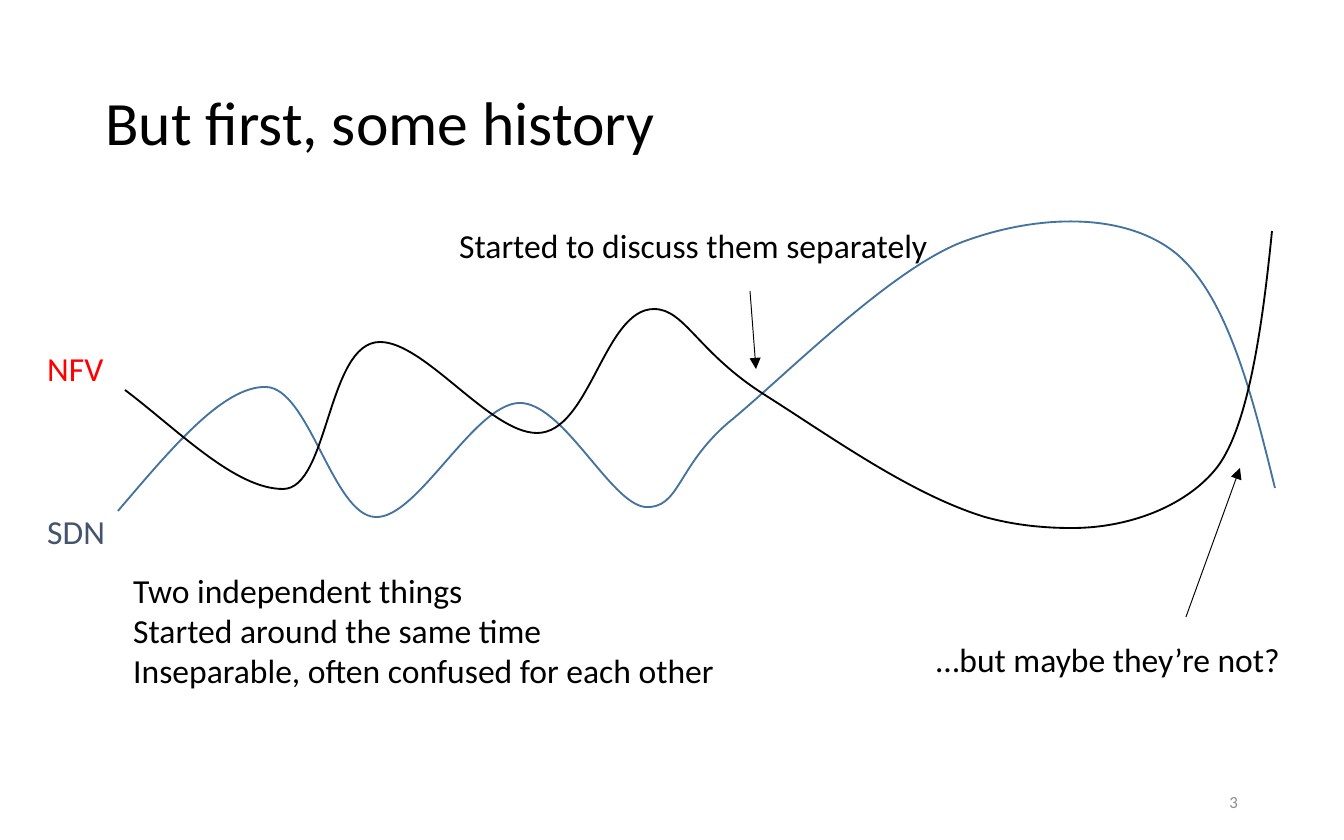
from lxml import etree
from pptx import Presentation
from pptx.dml.color import RGBColor
from pptx.enum.shapes import MSO_CONNECTOR
from pptx.enum.text import MSO_ANCHOR, PP_ALIGN
from pptx.oxml.ns import qn
from pptx.util import Emu, Pt

STRAIGHT = MSO_CONNECTOR.STRAIGHT
MIDDLE = MSO_ANCHOR.MIDDLE
LEFT, RIGHT = PP_ALIGN.LEFT, PP_ALIGN.RIGHT
TITLE_ONLY = 5
SCALE = 914400 / 134.4
FONT = "Calibri"
BLACK, RED, SLATE, BLUE, GRAY = "000000", "FF0000", "44546A", "43739E", "8C8C8C"

SDN_CURVE = [
    (0, 300),
    (53, 238), (105, 175), (148, 176),
    (191, 177), (215, 304), (257, 306),
    (299, 309), (355, 194), (401, 192),
    (445, 191), (492, 292), (527, 296),
    (562, 298), (558, 257), (610, 212),
    (663, 169), (768, 62), (842, 32),
    (915, 4), (1002, 0), (1055, 40),
    (1108, 81), (1133, 179), (1157, 277),
]
NFV_CURVE = [
    (7, 179),
    (60, 219), (117, 278), (165, 278),
    (211, 278), (209, 131), (262, 131),
    (307, 131), (372, 222), (419, 222),
    (472, 222), (486, 98), (536, 98),
    (567, 98), (579, 141), (647, 184),
    (712, 225), (792, 283), (867, 306),
    (896, 314), (925, 317), (954, 317),
    (1010, 317), (1066, 296), (1097, 259),
    (1129, 221), (1144, 121), (1154, 20),
]


def px(value):
    return Emu(round(value * SCALE))


def color(value):
    return RGBColor.from_string(value)


def format_paragraph(paragraph, size, text_color, alignment=LEFT):
    paragraph.alignment = alignment
    paragraph.font.name = FONT
    paragraph.font.size = Pt(size)
    paragraph.font.color.rgb = color(text_color)


def add_text(shapes, box, lines, size=18, text_color=BLACK, alignment=LEFT):
    shape = shapes.add_textbox(*map(px, box))
    frame = shape.text_frame
    frame.word_wrap = False
    frame.text = "\n".join(lines)
    for paragraph in frame.paragraphs:
        format_paragraph(paragraph, size, text_color, alignment)
    return shape


def add_title(slide, box, text):
    title = slide.shapes.title
    title.left, title.top, title.width, title.height = map(px, box)
    title.text_frame.text = text
    title.text_frame.vertical_anchor = MIDDLE
    paragraph = title.text_frame.paragraphs[0]
    paragraph.line_spacing = 0.9
    format_paragraph(paragraph, 33, BLACK)


def add_curve(shapes, left, top, points, line_color):
    builder = shapes.build_freeform(*points[0], scale=SCALE)
    builder.add_line_segments(points[1:], close=False)
    shape = builder.convert_to_shape(px(left), px(top))
    segments = list(shape.element.iter(qn("a:lnTo")))
    for start in range(0, len(segments), 3):
        curve = etree.Element(qn("a:cubicBezTo"))
        segments[start].addprevious(curve)
        for segment in segments[start:start + 3]:
            curve.append(segment[0])
            segment.getparent().remove(segment)
    shape.shadow.inherit = False
    shape.fill.background()
    shape.line.color.rgb = color(line_color)
    shape.line.width = Pt(1)


def add_history(slide, left, top):
    add_curve(slide.shapes, left, top, SDN_CURVE, BLUE)
    add_curve(slide.shapes, left, top, NFV_CURVE, BLACK)
    labels = [("NFV", 130, RED), ("SDN", 293, SLATE)]
    for text, offset, text_color in labels:
        box = (left - 84, top + offset, 85, 54)
        add_text(slide.shapes, box, [text], text_color=text_color)


def add_arrow(shapes, start, end):
    arrow = shapes.add_connector(STRAIGHT, *map(px, start + end))
    arrow.line.color.rgb = color(BLACK)
    arrow.line.width = Pt(0.5)
    etree.SubElement(arrow.line._get_or_add_ln(), qn("a:tailEnd"), type="triangle")
    etree.SubElement(arrow.element.spPr, qn("a:effectLst"))


def add_callout(slide, box, text, start, end):
    left, top = box[:2]
    shapes = slide.shapes.add_group_shape().shapes
    add_text(shapes, box, [text])
    add_arrow(
        shapes,
        (left + start[0], top + start[1]),
        (left + end[0], top + end[1]),
    )


def add_slide_number(slide, box, number):
    shape = add_text(slide.shapes, box, [number], 9, GRAY, RIGHT)
    shape.text_frame.word_wrap = True
    shape.text_frame.vertical_anchor = MIDDLE


def main():
    presentation = Presentation()
    presentation.slide_width, presentation.slide_height = px(1344), px(840)
    slide = presentation.slides.add_slide(presentation.slide_layouts[TITLE_ONLY])

    add_title(slide, (92, 45, 1159, 162), "But first, some history")
    add_history(slide, 118, 211)
    add_text(slide.shapes, (120, 563, 615, 136), [
        "Two independent things",
        "Started around the same time",
        "Inseparable, often confused for each other",
    ])
    add_callout(slide, (446, 218, 501, 54), "Started to discuss them separately",
                (304, 73), (310, 151))
    add_callout(slide, (923, 632, 375, 54), "…but maybe they’re not?",
                (263, -15), (317, -164))
    add_slide_number(slide, (949, 779, 302, 45), "3")
    presentation.save("out.pptx")


if __name__ == "__main__":
    main()
